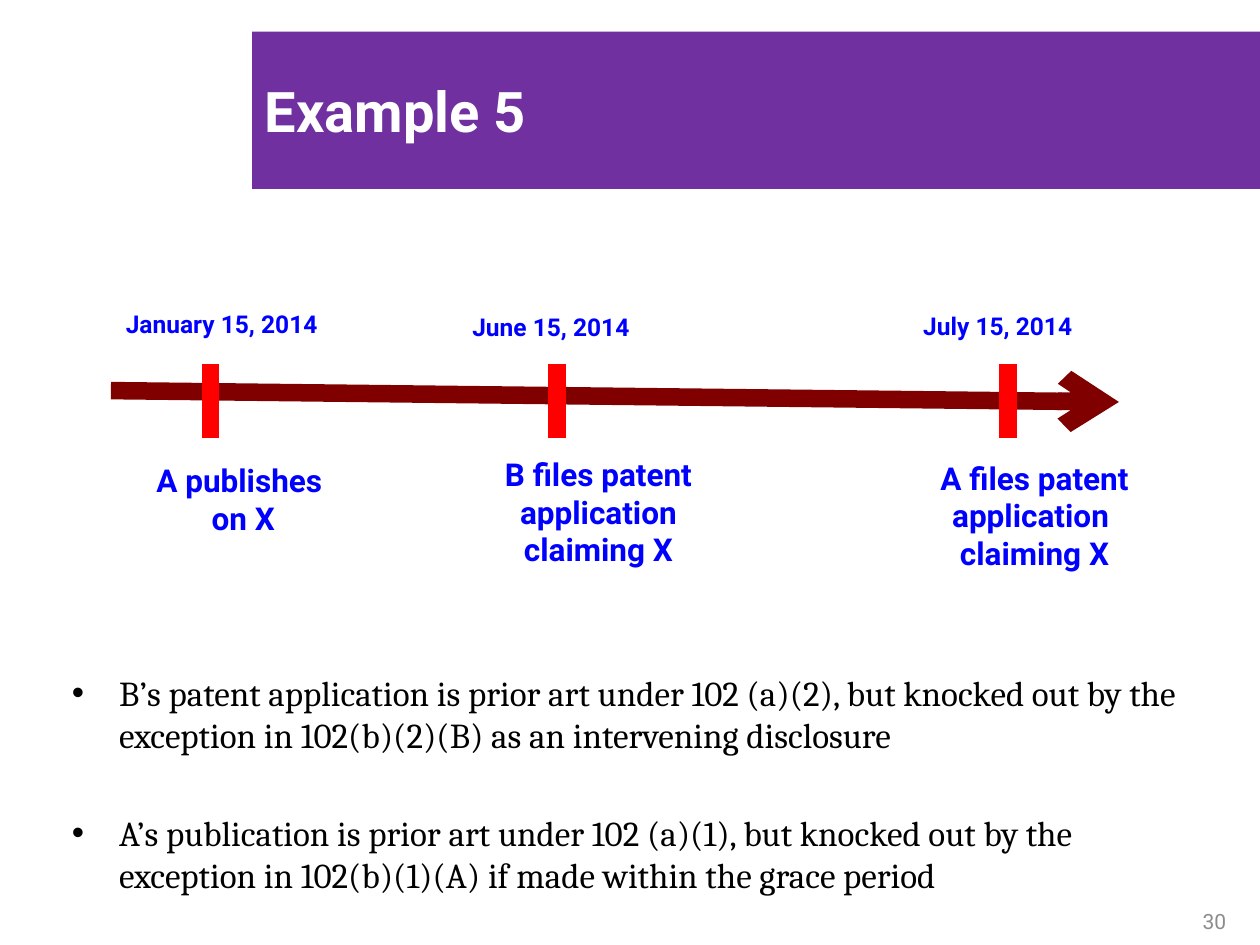
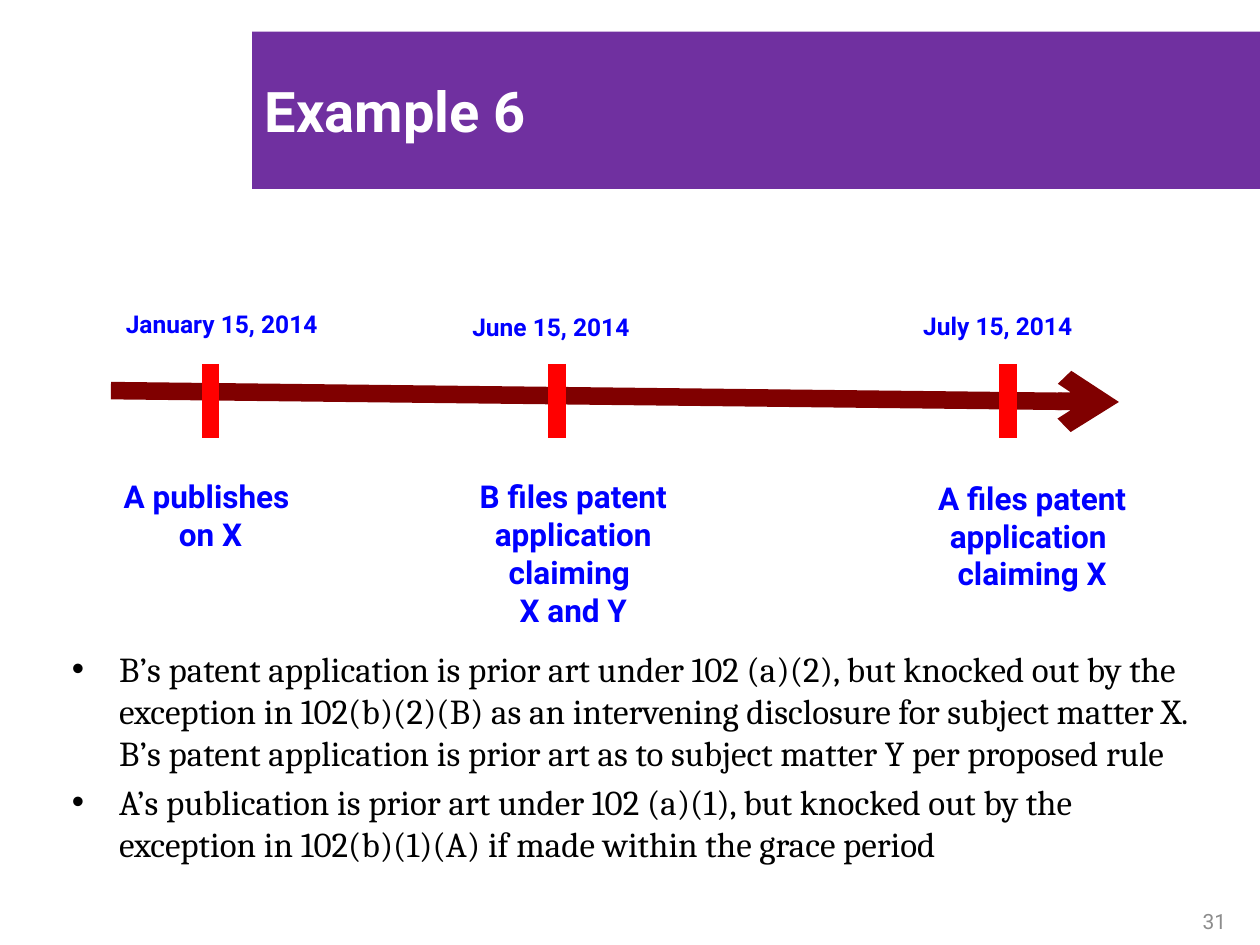
"""Build two slides that show patent prior-art examples on a timeline."""
from lxml import etree
from pptx import Presentation
from pptx.dml.color import RGBColor
from pptx.enum.shapes import MSO_CONNECTOR
from pptx.enum.text import MSO_ANCHOR, MSO_AUTO_SIZE, PP_ALIGN
from pptx.oxml.ns import qn
from pptx.util import Pt

STRAIGHT = MSO_CONNECTOR.STRAIGHT
LEFT, CENTER, RIGHT = PP_ALIGN.LEFT, PP_ALIGN.CENTER, PP_ALIGN.RIGHT
TOP, MIDDLE, BOTTOM = MSO_ANCHOR.TOP, MSO_ANCHOR.MIDDLE, MSO_ANCHOR.BOTTOM
NO_AUTOFIT = MSO_AUTO_SIZE.NONE

COLORS = {
    "band": "7030A0",
    "title": "FFFFFF",
    "number": "8C8C8C",
    "axis": "800000",
    "tick": "FF0000",
    "label": "0000FF",
    "body": "000000",
}
SANS, SERIF = "Roboto", "Cambria"

TICKS = (120.24, 318.24, 576)
TICK_TOP, TICK_BOTTOM = 208, 250.5
DATES = (
    ("January 15, 2014", 64.8, 172.8),
    ("June 15, 2014", 262.8, 175),
    ("July 15, 2014", 520.5, 174.2),
)
A_PUBLISHES = "A publishes \von X"
A_FILES = "A files patent application \vclaiming X"
A_PUBLICATION = (
    "A’s publication is prior art under 102 (a)(1), but knocked out by the "
    "exception in 102(b)(1)(A) if made within the grace period"
)
B_APPLICATION = (
    "B’s patent application is prior art under 102 (a)(2), but knocked out by "
    "the exception in 102(b)(2)(B) as an intervening disclosure"
)
EXAMPLES = (
    {
        "title": "Example 5",
        "number": "30",
        "events": (
            (A_PUBLISHES, 64, 260, 150),
            ("B files patent application claiming X", 270, 256.3, 144),
            (A_FILES, 516.2, 258.5, 150),
        ),
        "bullets": (B_APPLICATION, A_PUBLICATION),
        "body_top": 380,
        "bullet_gap": 32,
    },
    {
        "title": "Example 6",
        "number": "31",
        "events": (
            (A_PUBLISHES, 45.3, 269.3, 150),
            ("B files patent application claiming \vX and Y", 255.6, 269.3, 144),
            (A_FILES, 514.8, 270, 150),
        ),
        "bullets": (
            B_APPLICATION + " for subject matter X. B’s patent application is "
            "prior art as to subject matter Y per proposed rule",
            A_PUBLICATION,
        ),
        "body_top": 366.5,
        "bullet_gap": 4,
    },
)


def color(name):
    return RGBColor.from_string(COLORS[name])


def place(shape, left, top, width, height):
    shape.left, shape.top = Pt(left), Pt(top)
    shape.width, shape.height = Pt(width), Pt(height)


def format_paragraph(paragraph, font_name, size, color_name, align=LEFT, bold=False):
    paragraph.alignment = align
    font = paragraph.font
    font.name, font.size, font.bold = font_name, Pt(size), bold
    font.color.rgb = color(color_name)


def add_title(slide, text):
    title = slide.shapes.title
    place(title, 144, 18, 576, 90)
    title.fill.solid()
    title.fill.fore_color.rgb = color("band")
    frame = title.text_frame
    frame.text = text
    frame.auto_size = NO_AUTOFIT
    frame.vertical_anchor = MIDDLE
    format_paragraph(frame.paragraphs[0], SANS, 32, "title", bold=True)


def add_bullets(slide, bullets, top, gap):
    body = slide.placeholders[1]
    place(body, 33.84, top, 661.7, 130.3)
    frame = body.text_frame
    frame.text = "\n".join(bullets)
    frame.auto_size = NO_AUTOFIT
    frame.vertical_anchor = TOP
    for index, paragraph in enumerate(frame.paragraphs):
        paragraph.space_before = Pt(gap if index else 0)
        format_paragraph(paragraph, SERIF, 20, "body")


def add_text(slide, text, left, top, width, height, size, color_name, align, bold=True):
    box = slide.shapes.add_textbox(Pt(left), Pt(top), Pt(width), Pt(height))
    frame = box.text_frame
    frame.word_wrap = True
    frame.text = text
    format_paragraph(frame.paragraphs[0], SANS, size, color_name, align, bold)
    return frame


def add_number(slide, text):
    frame = add_text(slide, text, 558, 498.2, 149.8, 36, 12, "number", RIGHT, bold=False)
    frame.vertical_anchor = BOTTOM
    frame.margin_bottom = Pt(0.7)


def add_line(slide, start, end, color_name, arrow=False):
    points = [Pt(value) for value in (*start, *end)]
    connector = slide.shapes.add_connector(STRAIGHT, *points)
    connector.line.width = Pt(10)
    connector.line.color.rgb = color(color_name)
    properties = connector._element.spPr
    if arrow:
        outline = properties.find(qn("a:ln"))
        etree.SubElement(outline, qn("a:tailEnd"), type="arrow")
    etree.SubElement(properties, qn("a:effectLst"))


def add_timeline(slide, events):
    add_line(slide, (63.4, 223.2), (639.4, 229.7), "axis", arrow=True)
    for tick in TICKS:
        add_line(slide, (tick, TICK_TOP), (tick, TICK_BOTTOM), "tick")
    for text, left, top in DATES:
        add_text(slide, text, left, top, 130, 24.5, 14, "label", LEFT)
    for text, left, top, width in events:
        lines_height = 94 if "and Y" in text else 73
        add_text(slide, text, left, top, width, lines_height, 18, "label", CENTER)


def main():
    presentation = Presentation()
    presentation.slide_width, presentation.slide_height = Pt(720), Pt(540)
    layout = presentation.slide_layouts[1]
    for example in EXAMPLES:
        slide = presentation.slides.add_slide(layout)
        add_title(slide, example["title"])
        add_number(slide, example["number"])
        add_timeline(slide, example["events"])
        add_bullets(slide, example["bullets"], example["body_top"], example["bullet_gap"])
    presentation.save("out.pptx")


if __name__ == "__main__":
    main()
